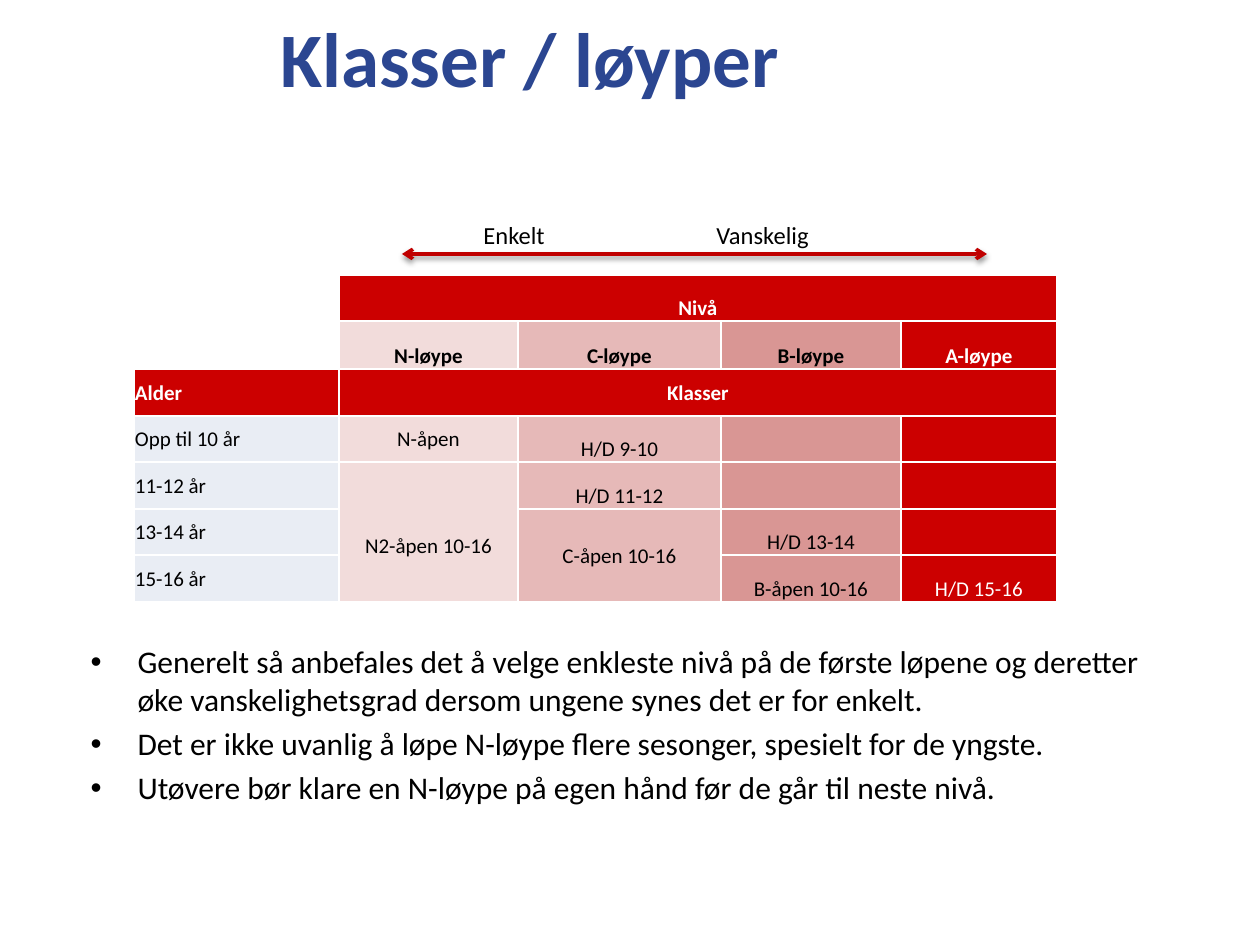
from dataclasses import dataclass
from lxml import etree
from pptx import Presentation
from pptx import util as u
from pptx.dml.color import RGBColor
from pptx.enum import shapes, text
from pptx.oxml import parse_xml
from pptx.oxml.ns import nsdecls, qn

PX_PER_INCH = 126


@dataclass(frozen=True)
class Theme:
    font: str = "Calibri"
    title: str = "2B4691"
    black: str = "000000"
    white: str = "FFFFFF"
    arrow: str = "C00000"
    red: str = "CC0000"
    age: str = "E9EDF4"
    n_course: str = "F2DCDB"
    c_course: str = "E6B9B8"
    b_course: str = "D99694"
    title_size: int = 44
    body_size: int = 18
    label_size: int = 14
    cell_size: int = 12


THEME = Theme()
COLUMNS = [205, 179, 203, 180, 156]
ROWS = [46, 48, 47, 46, 47, 46, 47]
COURSE_FILLS = [THEME.age, THEME.n_course, THEME.c_course, THEME.b_course, THEME.red]
CELLS = [
    ["", "Nivå", "", "", ""],
    ["", "N-løype", "C-løype", "B-løype", "A-løype"],
    ["Alder", "Klasser", "", "", ""],
    ["Opp til 10 år", "N-åpen", "H/D 9-10", "", ""],
    ["11-12 år", "N2-åpen 10-16", "H/D 11-12", "", ""],
    ["13-14 år", "", "C-åpen 10-16", "H/D 13-14", ""],
    ["15-16 år", "", "", "B-åpen 10-16", "H/D 15-16"],
]
MERGES = [((0, 1), (0, 4)), ((2, 1), (2, 4)), ((4, 1), (6, 1)), ((5, 2), (6, 2))]
MIDDLE_CELLS = {(3, 1), (4, 1), (5, 2)}
BULLETS = [
    "Generelt så anbefales det å velge enkleste nivå på de første løpene og deretter "
    "øke vanskelighetsgrad dersom ungene synes det er for enkelt.",
    "Det er ikke uvanlig å løpe N-løype flere sesonger, spesielt for de yngste.",
    "Utøvere bør klare en N-løype på egen hånd før de går til neste nivå.",
]


def px(length):
    return u.Emu(round(length * 914400 / PX_PER_INCH))


def apply(target, **values):
    for name, value in values.items():
        setattr(target, name, value)


def place(shape, box):
    apply(shape, **dict(zip(("left", "top", "width", "height"), map(px, box))))


def add_text(paragraph, words, size, color, bold=False):
    run = paragraph.add_run()
    run.text = words
    apply(run.font, name=THEME.font, size=u.Pt(size), bold=bold)
    run.font.color.rgb = RGBColor.from_string(color)


def add_title(slide, box):
    title = slide.shapes.title
    place(title, box)
    apply(title.text_frame, vertical_anchor=text.MSO_ANCHOR.MIDDLE,
          auto_size=text.MSO_AUTO_SIZE.NONE, word_wrap=True)
    paragraph = title.text_frame.paragraphs[0]
    paragraph.alignment = text.PP_ALIGN.CENTER
    add_text(paragraph, "Klasser / løyper", THEME.title_size, THEME.title, True)


def add_advice(slide, box):
    body = slide.placeholders[1]
    place(body, box)
    frame = body.text_frame
    apply(frame, auto_size=text.MSO_AUTO_SIZE.NONE, word_wrap=True)
    for index, words in enumerate(BULLETS):
        paragraph = frame.add_paragraph() if index else frame.paragraphs[0]
        properties = paragraph._p.get_or_add_pPr()
        properties.set("marL", str(px(47)))
        properties.set("indent", str(px(-47)))
        etree.SubElement(properties, qn("a:buChar"), char="•")
        paragraph.space_before = u.Pt(3.6 if index else 0)
        add_text(paragraph, words, THEME.body_size, THEME.black)


def add_difficulty_scale(slide, box):
    """Draw the two-way arrow along the bottom of the box, with its labels above."""
    left, top, width, height = box
    arrow_y = px(top + height)
    arrow = slide.shapes.add_connector(
        shapes.MSO_CONNECTOR.STRAIGHT, px(left), arrow_y, px(left + width), arrow_y)
    arrow.line.width = u.Pt(2)
    arrow.line.color.rgb = RGBColor.from_string(THEME.arrow)
    line = arrow.line._get_or_add_ln()
    for end in ("a:headEnd", "a:tailEnd"):
        etree.SubElement(line, qn(end), type="arrow")
    arrow._element.spPr.append(parse_xml(
        f'<a:effectLst {nsdecls("a")}><a:outerShdw blurRad="40000" dist="20000" '
        f'dir="5400000" rotWithShape="0"><a:srgbClr val="{THEME.black}">'
        '<a:alpha val="38000"/></a:srgbClr></a:outerShdw></a:effectLst>'))

    labels = slide.shapes.add_textbox(px(left + 69), px(top), px(525), px(43))
    labels.text_frame.word_wrap = True
    paragraph = labels.text_frame.paragraphs[0]
    tabs = etree.SubElement(paragraph._p.get_or_add_pPr(), qn("a:tabLst"))
    etree.SubElement(tabs, qn("a:tab"), pos=str(px(233)), algn="l")
    add_text(paragraph, "Enkelt\tVanskelig", THEME.label_size, THEME.black)


def set_borders(cell):
    properties = cell._tc.get_or_add_tcPr()
    for side in ("lnL", "lnR", "lnT", "lnB"):
        properties.append(parse_xml(
            f'<a:{side} {nsdecls("a")} w="12700"><a:solidFill>'
            f'<a:srgbClr val="{THEME.white}"/></a:solidFill></a:{side}>'))


def format_cell(cell, row, column):
    middle = column == 0 or row == 2 or (row, column) in MIDDLE_CELLS
    apply(cell, margin_left=px(1), margin_right=px(1), margin_bottom=0,
          margin_top=px(28 if (row, column) == (4, 1) else 1),
          vertical_anchor=text.MSO_ANCHOR.MIDDLE if middle else text.MSO_ANCHOR.BOTTOM)
    if row < 2 and column == 0:
        cell.fill.background()
        return
    set_borders(cell)
    fill = THEME.red if row in (0, 2) else COURSE_FILLS[column]
    cell.fill.solid()
    cell.fill.fore_color.rgb = RGBColor.from_string(fill)
    if CELLS[row][column]:
        paragraph = cell.text_frame.paragraphs[0]
        paragraph.alignment = text.PP_ALIGN.CENTER if column else text.PP_ALIGN.LEFT
        color = THEME.white if fill == THEME.red else THEME.black
        add_text(paragraph, CELLS[row][column], THEME.cell_size, color, row < 3)


def add_class_table(slide, left, top):
    box = map(px, (left, top, sum(COLUMNS), sum(ROWS)))
    table = slide.shapes.add_table(len(ROWS), len(COLUMNS), *box).table
    apply(table, first_row=False, horz_banding=False)
    for column, width in zip(table.columns, COLUMNS):
        column.width = px(width)
    for row, height in zip(table.rows, ROWS):
        row.height = px(height)
    for row in range(len(ROWS)):
        for column in range(len(COLUMNS)):
            format_cell(table.cell(row, column), row, column)
    for first, last in MERGES:
        table.cell(*first).merge(table.cell(*last))


def main():
    presentation = Presentation()
    apply(presentation, slide_width=px(1260), slide_height=px(945))
    slide = presentation.slides.add_slide(presentation.slide_layouts[1])
    add_title(slide, (94, -2, 872, 117))
    add_advice(slide, (78, 636, 1102, 214))
    add_class_table(slide, 134, 275)
    add_difficulty_scale(slide, (402, 214, 585, 40))
    presentation.save("out.pptx")


if __name__ == "__main__":
    main()
